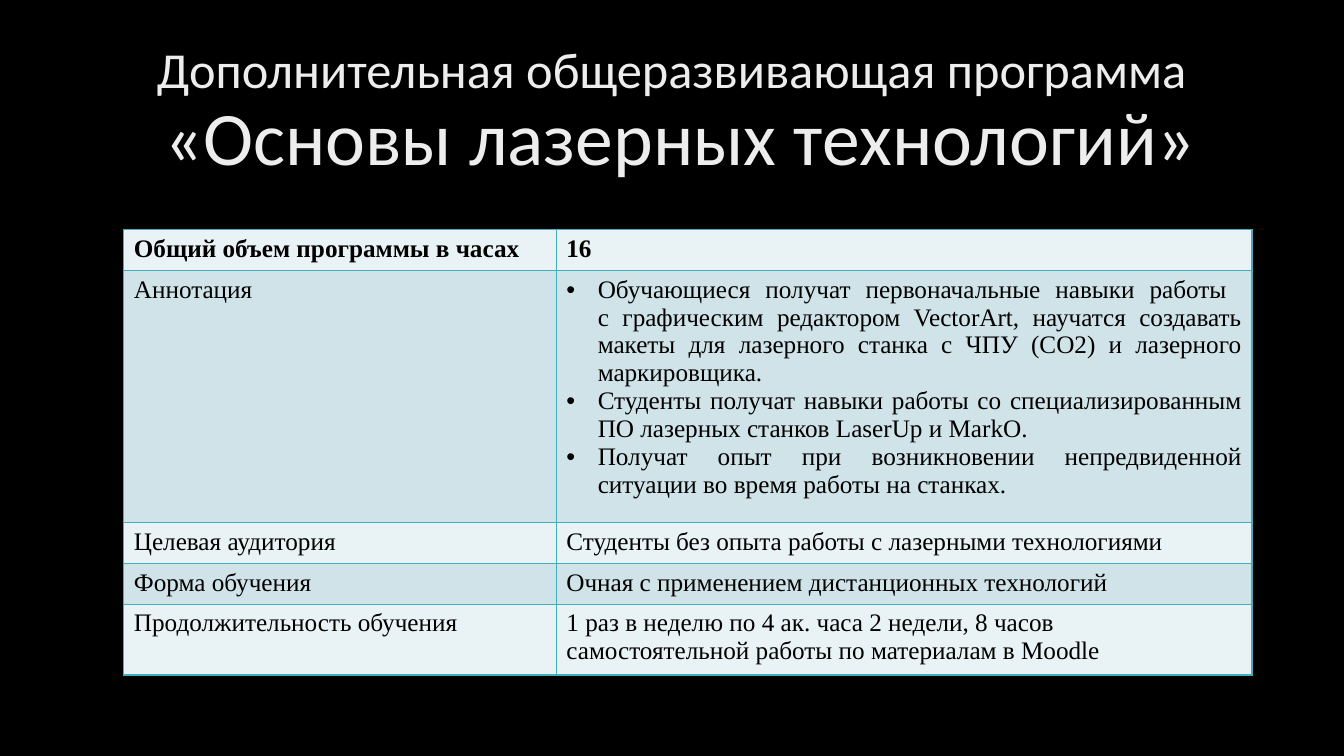
from dataclasses import dataclass

from lxml import etree
from pptx import Presentation
from pptx import util as u
from pptx.dml.color import RGBColor
from pptx.enum import text
from pptx.oxml import ns

TITLE = ["Дополнительная общеразвивающая программа", " «Основы лазерных технологий»"]
ANNOTATION = [
    "Обучающиеся получат первоначальные навыки работы \vс графическим редактором "
    "VectorArt, научатся создавать макеты для лазерного станка с ЧПУ (СО2) "
    "и лазерного маркировщика.",
    "Студенты получат навыки работы со специализированным ПО лазерных станков "
    "LaserUp и MarkO.",
    "Получат опыт при возникновении непредвиденной ситуации во время работы на станках.",
]
ROWS = [
    ("Общий объем программы в часах", "16"),
    ("Аннотация", ANNOTATION),
    ("Целевая аудитория", "Студенты без опыта работы с лазерными технологиями"),
    ("Форма обучения", "Очная с применением дистанционных технологий"),
    ("Продолжительность обучения",
     "1 раз в неделю по 4 ак. часа 2 недели, 8 часов самостоятельной работы "
     "по материалам в Moodle"),
]


@dataclass(frozen=True)
class Theme:
    background: str = "000000"
    title: str = "EDEDED"
    body: str = "000000"
    border: str = "41AEBD"
    bands: tuple = ("E9F2F4", "CFE3E8")
    title_font: str = "Calibri"
    body_font: str = "Times New Roman"
    title_sizes: tuple = (36, 54)
    body_size: int = 18


THEME = Theme()
SLIDE_SIZE = u.Cm(33.87), u.Cm(19.05)
TITLE_BOX = u.Cm(2.33), u.Cm(1.02), u.Cm(29.21), u.Cm(3.68)
TABLE_LEFT, TABLE_TOP = u.Cm(3.12), u.Cm(5.79)
COLUMN_WIDTHS = u.Cm(10.9), u.Cm(17.53)
ROW_HEIGHT = u.Cm(1.03)
BULLET_INDENT = u.Cm(0.79)
BORDER_WIDTH = u.Pt(1)


def add_span(para, words, font, size, color, bold=False):
    for index, line in enumerate(words.split("\v")):
        if index:
            para.add_line_break()
        span = para.add_run()
        span.text = line
        span.font.name = font
        span.font.size = u.Pt(size)
        span.font.bold = bold
        span.font.color.rgb = RGBColor.from_string(color)


def add_bullet(para):
    props = para._p.get_or_add_pPr()
    props.set("marL", str(BULLET_INDENT))
    props.set("indent", str(-BULLET_INDENT))
    etree.SubElement(props, ns.qn("a:buFont"), typeface="Arial")
    etree.SubElement(props, ns.qn("a:buChar"), char="•")
    para.alignment = text.PP_ALIGN.JUSTIFY


def style_cell(cell, color):
    props = cell._tc.get_or_add_tcPr()
    for side in ("lnL", "lnR", "lnT", "lnB"):
        line = etree.SubElement(props, ns.qn(f"a:{side}"), w=str(BORDER_WIDTH))
        fill = etree.SubElement(line, ns.qn("a:solidFill"))
        etree.SubElement(fill, ns.qn("a:srgbClr"), val=THEME.border)
    cell.fill.solid()
    cell.fill.fore_color.rgb = RGBColor.from_string(color)


def fill_cell(cell, content, bold):
    bulleted = isinstance(content, list)
    frame = cell.text_frame
    for index, words in enumerate(content if bulleted else [content]):
        para = frame.add_paragraph() if index else frame.paragraphs[0]
        if bulleted:
            add_bullet(para)
        add_span(para, words, THEME.body_font, THEME.body_size, THEME.body, bold)


def add_title(page):
    frame = page.shapes.add_textbox(*TITLE_BOX).text_frame
    frame.word_wrap = True
    frame.vertical_anchor = text.MSO_ANCHOR.MIDDLE
    para = frame.paragraphs[0]
    para.alignment = text.PP_ALIGN.CENTER
    para.line_spacing = 0.9
    for index, (words, size) in enumerate(zip(TITLE, THEME.title_sizes)):
        if index:
            para.add_line_break()
        add_span(para, words, THEME.title_font, size, THEME.title)


def add_program_table(page):
    table = page.shapes.add_table(
        len(ROWS), len(COLUMN_WIDTHS), TABLE_LEFT, TABLE_TOP,
        sum(COLUMN_WIDTHS), ROW_HEIGHT * len(ROWS)).table
    table.first_row = table.horz_banding = False
    for column, width in zip(table.columns, COLUMN_WIDTHS):
        column.width = width
    for row, contents in enumerate(ROWS):
        for column, content in enumerate(contents):
            cell = table.cell(row, column)
            style_cell(cell, THEME.bands[row % 2])
            fill_cell(cell, content, bold=row == 0)


def main():
    deck = Presentation()
    deck.slide_width, deck.slide_height = SLIDE_SIZE
    page = deck.slides.add_slide(deck.slide_layouts[6])
    page.background.fill.solid()
    page.background.fill.fore_color.rgb = RGBColor.from_string(THEME.background)
    add_title(page)
    add_program_table(page)
    deck.save("out.pptx")


if __name__ == "__main__":
    main()
